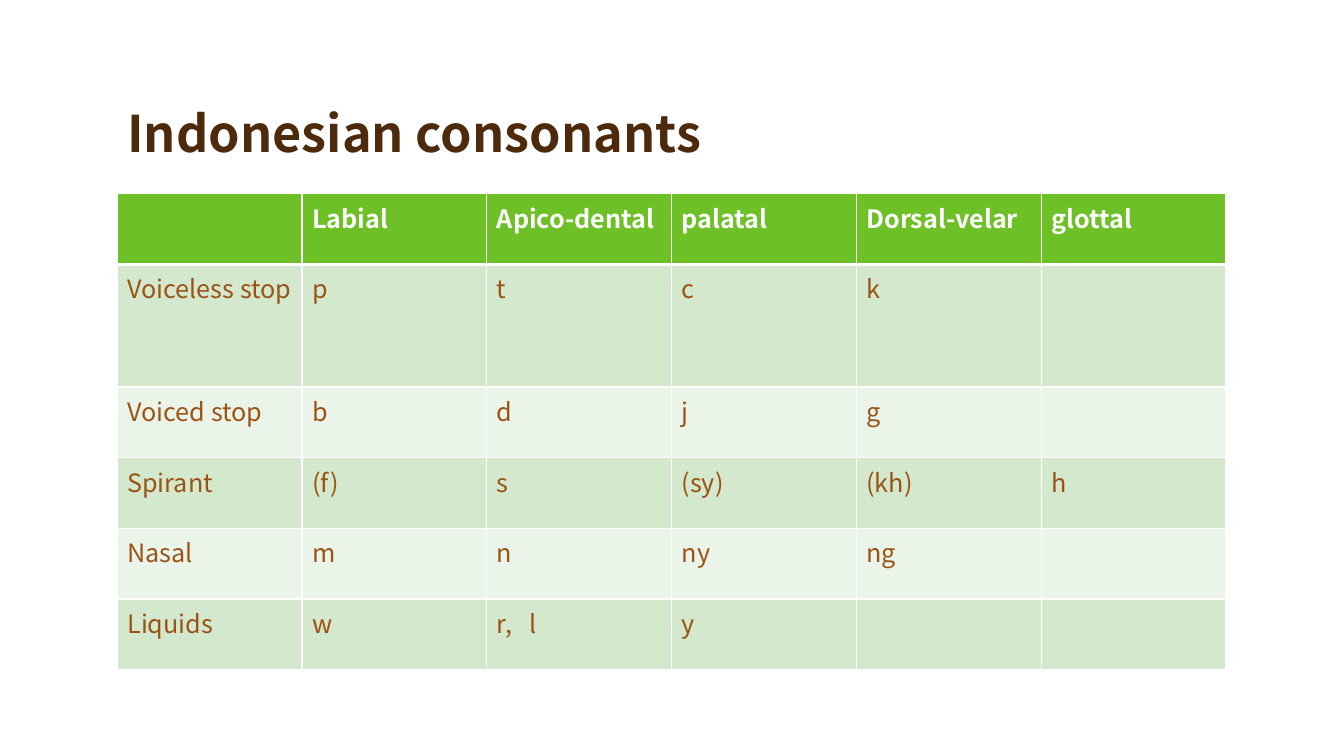
from pptx import Presentation
from pptx.dml.color import RGBColor
from pptx.enum import text
from pptx.oxml import ns, parse_xml
from pptx.util import Pt

WHITE = RGBColor(0xFF, 0xFF, 0xFF)
DARK_BROWN = RGBColor(0x4D, 0x2A, 0x0B)
BROWN = RGBColor(0x9A, 0x53, 0x15)
GREEN = RGBColor(0x6D, 0xC0, 0x25)
LIGHT_GREEN = RGBColor(0xD4, 0xE8, 0xCD)
PALE_GREEN = RGBColor(0xEB, 0xF4, 0xE8)

CONSONANTS = [
    ["", "Labial", "Apico-dental", "palatal", "Dorsal-velar", "glottal"],
    ["Voiceless stop", "p", "t", "c", "k", ""],
    ["Voiced stop", "b", "d", "j", "g", ""],
    ["Spirant", "(f)", "s", "(sy)", "(kh)", "h"],
    ["Nasal", "m", "n", "ny", "ng", ""],
    ["Liquids", "w", "r,\tl", "y", "", ""],
]
ROW_HEIGHTS = [50.5, 87.5] + [50.5] * 4


class SlideBuilder:
    font_name = "Noto Sans CJK TC"

    def __init__(self, deck):
        self.page = deck.slides.add_slide(deck.slide_layouts[5])

    def style(self, para, size, color, bold):
        for span in para.runs:
            span.font.name = self.font_name
            span.font.size = Pt(size)
            span.font.bold = bold
            span.font.color.rgb = color

    def title(self, words, left, top, width, height):
        box = self.page.shapes.title
        box.left, box.top, box.width, box.height = map(Pt, (left, top, width, height))
        frame = box.text_frame
        frame.text = words
        frame.word_wrap = True
        frame.auto_size = text.MSO_AUTO_SIZE.NONE
        frame.vertical_anchor = text.MSO_ANCHOR.BOTTOM
        para = frame.paragraphs[0]
        para.alignment = text.PP_ALIGN.LEFT
        para.line_spacing = 0.9
        self.style(para, 36, DARK_BROWN, True)

    def borders(self, cell, top, bottom):
        """Draw white cell edges; top and bottom are widths in points."""
        widths = {"lnL": 1, "lnR": 1, "lnT": top, "lnB": bottom}
        for index, (edge, width) in enumerate(widths.items()):
            line = parse_xml(
                f'<a:{edge} {ns.nsdecls("a")} w="{Pt(width)}"><a:solidFill>'
                f'<a:srgbClr val="{WHITE}"/></a:solidFill></a:{edge}>')
            cell._tc.get_or_add_tcPr().insert(index, line)

    def tab_stop(self, para, position):
        para._p.get_or_add_pPr().append(parse_xml(
            f'<a:tabLst {ns.nsdecls("a")}><a:tab pos="{Pt(position)}" algn="l"/></a:tabLst>'))

    def table(self, rows, heights, left, top, width):
        frame = self.page.shapes.add_table(
            len(rows), len(rows[0]), Pt(left), Pt(top), Pt(width), Pt(sum(heights)))
        grid = frame.table
        for column in grid.columns:
            column.width = Pt(width / len(rows[0]))
        for number, (words, height) in enumerate(zip(rows, heights)):
            grid.rows[number].height = Pt(height)
            header = number == 0
            fill = GREEN if header else (PALE_GREEN, LIGHT_GREEN)[number % 2]
            for cell, word in zip(grid.rows[number].cells, words):
                cell.text = word
                cell.fill.solid()
                cell.fill.fore_color.rgb = fill
                self.borders(cell, 3 if number == 1 else 1, 3 if header else 1)
                para = cell.text_frame.paragraphs[0]
                if "\t" in word:
                    self.tab_stop(para, 23)
                self.style(para, 18, WHITE if header else BROWN, header)


def main():
    deck = Presentation()
    deck.slide_width, deck.slide_height = Pt(960), Pt(540)
    builder = SlideBuilder(deck)
    builder.title("Indonesian consonants", 83.75, 24, 792, 96)
    builder.table(CONSONANTS, ROW_HEIGHTS, 83.75, 138.5, 792)
    deck.save("out.pptx")


if __name__ == "__main__":
    main()
